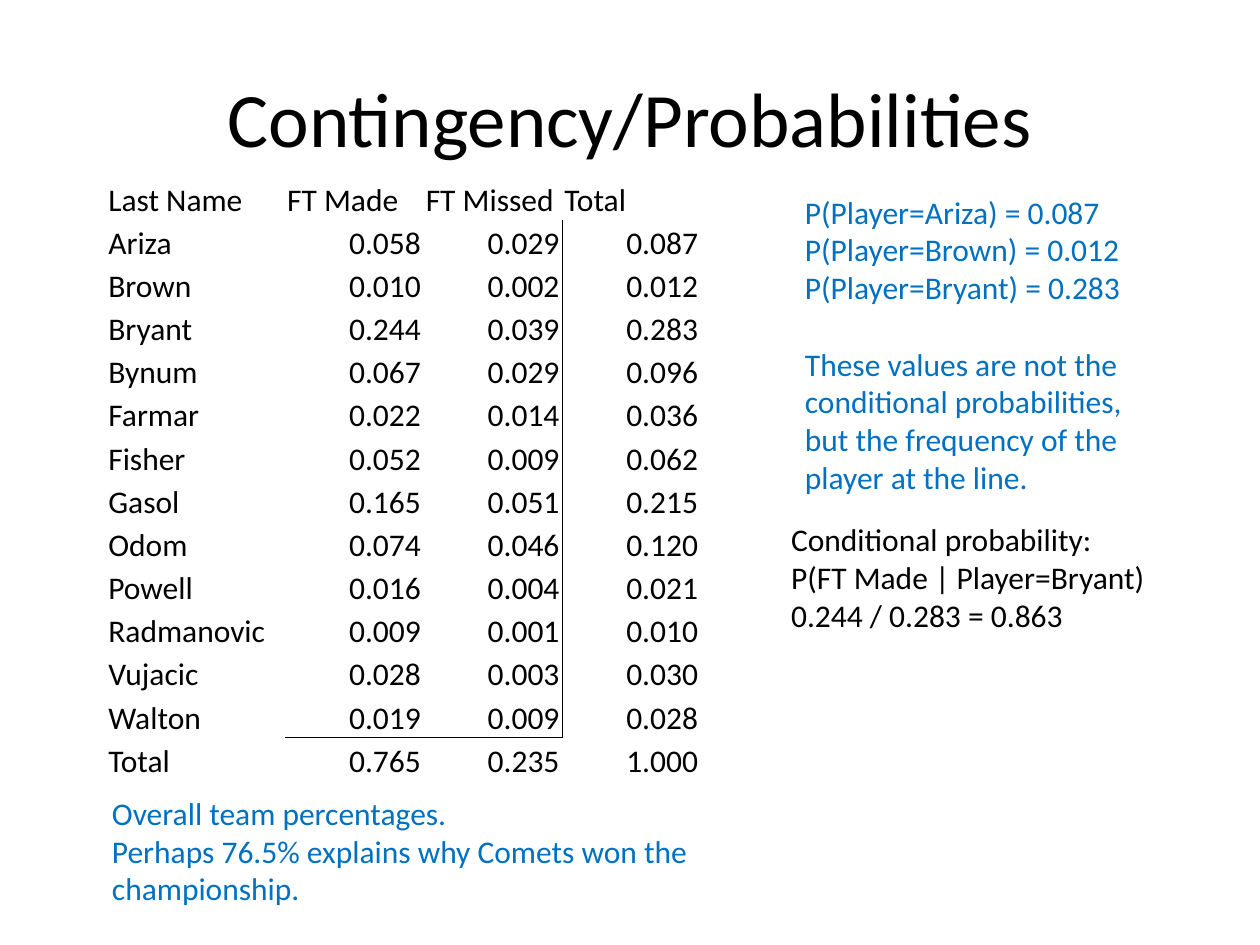
from lxml.etree import SubElement
from pptx import Presentation
from pptx.dml.color import RGBColor
from pptx.enum.text import MSO_ANCHOR as ANCHOR, MSO_AUTO_SIZE as AUTO, PP_ALIGN as ALIGN
from pptx.oxml.ns import qn
from pptx.util import Inches, Pt

BLACK, BLUE = "000000", "0070C0"
TITLE = "Contingency/Probabilities"
HEADER = ("Last Name", "FT Made", "FT Missed", "Total")
ROWS = [
    ("Ariza", 0.058, 0.029, 0.087),
    ("Brown", 0.010, 0.002, 0.012),
    ("Bryant", 0.244, 0.039, 0.283),
    ("Bynum", 0.067, 0.029, 0.096),
    ("Farmar", 0.022, 0.014, 0.036),
    ("Fisher", 0.052, 0.009, 0.062),
    ("Gasol", 0.165, 0.051, 0.215),
    ("Odom", 0.074, 0.046, 0.120),
    ("Powell", 0.016, 0.004, 0.021),
    ("Radmanovic", 0.009, 0.001, 0.010),
    ("Vujacic", 0.028, 0.003, 0.030),
    ("Walton", 0.019, 0.009, 0.028),
    ("Total", 0.765, 0.235, 1.000),
]
COL_WIDTHS = (1.42, 1.1, 1.1, 1.1)
TABLE_HEIGHT = 4.8
NO_STYLE = "{2D5ABB26-0587-4C30-8999-92F81FD0307C}"
NOTES = [
    ((6.29, 1.48, 3.07, 2.52), BLUE, True, [
        "P(Player=Ariza) = 0.087",
        "P(Player=Brown) = 0.012",
        "P(Player=Bryant) = 0.283",
        "These values are not the conditional probabilities, "
        "but the frequency of the player at the line.",
    ]),
    ((0.79, 6.25, 6.19, 0.71), BLUE, False, [
        "Overall team percentages.",
        "Perhaps 76.5% explains why Comets won the championship.",
    ]),
    ((6.18, 4.08, 3.31, 1.01), BLACK, True, [
        "Conditional probability:",
        "P(FT Made | Player=Bryant)",
        "0.244 / 0.283 = 0.863",
    ]),
]
GAP_BEFORE = {"These values": 22}


def rgb(color):
    return RGBColor.from_string(color)


def write(p, text, size=18, color=BLACK, align=ALIGN.LEFT, before=0):
    p.alignment = align
    p.space_before = Pt(before)
    r = p.add_run()
    r.text = text
    r.font.size, r.font.name = Pt(size), "Calibri"
    r.font.color.rgb = rgb(color)


def add_borders(cell, sides):
    tc_pr = cell._tc.get_or_add_tcPr()
    for i, side in enumerate(s for s in "LRTB" if s in sides):
        ln = SubElement(tc_pr, qn(f"a:ln{side}"), w=str(Pt(0.5)))
        SubElement(SubElement(ln, qn("a:solidFill")), qn("a:srgbClr"), val=BLACK)
        tc_pr.insert(i, ln)


def border_sides(row, col):
    last = len(ROWS)
    sides = ""
    if 0 < row < last:
        sides += {2: "R", 3: "L"}.get(col, "")
    if col in (1, 2):
        sides += {last - 1: "B", last: "T"}.get(row, "")
    return sides


def add_probability_table(slide):
    data = [HEADER] + ROWS
    frame = slide.shapes.add_table(len(data), len(HEADER), Inches(0.84), Inches(1.4),
                                   Inches(sum(COL_WIDTHS)), Inches(TABLE_HEIGHT))
    table = frame.table
    table.first_row = table.horz_banding = False
    table._tbl.tblPr.find(qn("a:tableStyleId")).text = NO_STYLE
    for column, width in zip(table.columns, COL_WIDTHS):
        column.width = Inches(width)
    for i, values in enumerate(data):
        table.rows[i].height = Inches(TABLE_HEIGHT / len(data))
        for j, value in enumerate(values):
            cell = table.cell(i, j)
            cell.margin_left = cell.margin_right = cell.margin_top = Inches(0.02)
            cell.margin_bottom = 0
            cell.vertical_anchor = ANCHOR.BOTTOM
            cell.fill.background()
            is_text = isinstance(value, str)
            write(cell.text_frame.paragraphs[0], value if is_text else f"{value:.3f}",
                  align=ALIGN.LEFT if is_text else ALIGN.RIGHT)
            add_borders(cell, border_sides(i, j))


def add_note(slide, box, color, wrap, lines):
    tf = slide.shapes.add_textbox(*map(Inches, box)).text_frame
    tf.word_wrap = wrap
    tf.auto_size = AUTO.SHAPE_TO_FIT_TEXT
    for i, line in enumerate(lines):
        p = tf.add_paragraph() if i else tf.paragraphs[0]
        before = GAP_BEFORE.get(" ".join(line.split()[:2]), 0)
        write(p, line, color=color, before=before)


def main():
    prs = Presentation()
    prs.slide_width, prs.slide_height = Inches(10), Inches(7.5)
    slide = prs.slides.add_slide(prs.slide_layouts[5])
    title = slide.shapes.title
    title.left, title.top, title.width, title.height = map(Inches, (0.5, 0.3, 9, 1.25))
    title.text_frame.vertical_anchor = ANCHOR.MIDDLE
    write(title.text_frame.paragraphs[0], TITLE, size=44, align=ALIGN.CENTER)
    add_probability_table(slide)
    for note in NOTES:
        add_note(slide, *note)
    prs.save("out.pptx")


if __name__ == "__main__":
    main()
